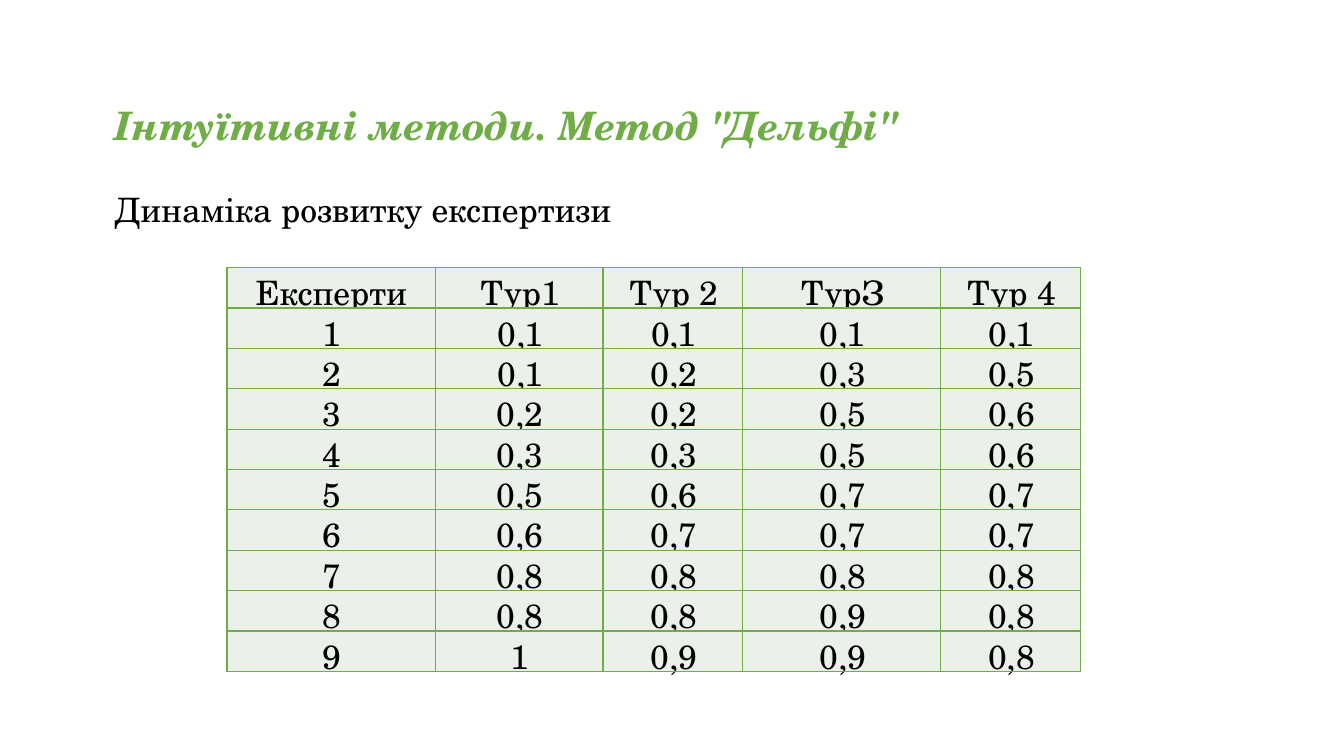
from lxml.etree import SubElement
from pptx import Presentation
from pptx.dml.color import RGBColor
from pptx.enum.text import MSO_ANCHOR, MSO_AUTO_SIZE, PP_ALIGN
from pptx.oxml.ns import qn
from pptx.util import Pt

TITLE = 'Інтуїтивні методи. Метод "Дельфі"'
SUBTITLE = "Динаміка розвитку експертизи"
HEADER = ["Експерти", "Тур1", "Тур 2", "ТурЗ", "Тур 4"]
ROUNDS = [
    ["0,1", "0,1", "0,1", "0,1"],
    ["0,1", "0,2", "0,3", "0,5"],
    ["0,2", "0,2", "0,5", "0,6"],
    ["0,3", "0,3", "0,5", "0,6"],
    ["0,5", "0,6", "0,7", "0,7"],
    ["0,6", "0,7", "0,7", "0,7"],
    ["0,8", "0,8", "0,8", "0,8"],
    ["0,8", "0,8", "0,9", "0,8"],
    ["1", "0,9", "0,9", "0,8"],
]
COLORS = {"green": "70AD47", "text": "000000", "cell": "EBF1E9"}
FONT = "TeX Gyre Schola"
COLUMN_WIDTHS = [149, 119.5, 100, 141.25, 100]
ROW_HEIGHT = 19.44


def add_text(paragraph, text, size, color, emphasis=False):
    run = paragraph.add_run()
    run.text = text
    run.font.name = FONT
    run.font.size = Pt(size)
    run.font.bold = run.font.italic = emphasis
    run.font.color.rgb = RGBColor.from_string(COLORS[color])


def add_borders(cell):
    properties = cell._tc.get_or_add_tcPr()
    for index, side in enumerate(("a:lnL", "a:lnR", "a:lnT", "a:lnB")):
        line = properties.makeelement(qn(side), {"w": str(Pt(1))})
        fill = SubElement(line, qn("a:solidFill"))
        SubElement(fill, qn("a:srgbClr"), val=COLORS["green"])
        properties.insert(index, line)


def add_heading(slide):
    shape = slide.shapes.add_textbox(Pt(75), Pt(69.1), Pt(809.3), Pt(99.4))
    frame = shape.text_frame
    frame.word_wrap = True
    frame.auto_size = MSO_AUTO_SIZE.SHAPE_TO_FIT_TEXT
    add_text(frame.paragraphs[0], TITLE, 28, "green", True)
    paragraph = frame.add_paragraph()
    paragraph.alignment = PP_ALIGN.JUSTIFY
    paragraph.space_before = Pt(29)
    add_text(paragraph, SUBTITLE, 24, "text")


def add_ratings(slide):
    rows = [HEADER] + [[str(number), *values] for number, values in enumerate(ROUNDS, 1)]
    table = slide.shapes.add_table(
        len(rows), len(HEADER), Pt(162.2), Pt(191.2),
        Pt(sum(COLUMN_WIDTHS)), Pt(ROW_HEIGHT * len(rows)),
    ).table
    for column, width in zip(table.columns, COLUMN_WIDTHS):
        column.width = Pt(width)
    for row_index, values in enumerate(rows):
        table.rows[row_index].height = Pt(ROW_HEIGHT)
        for column_index, value in enumerate(values):
            cell = table.cell(row_index, column_index)
            cell.margin_left = cell.margin_right = Pt(5)
            cell.margin_top = cell.margin_bottom = Pt(0)
            cell.vertical_anchor = MSO_ANCHOR.MIDDLE
            cell.fill.solid()
            cell.fill.fore_color.rgb = RGBColor.from_string(COLORS["cell"])
            add_borders(cell)
            paragraph = cell.text_frame.paragraphs[0]
            paragraph.alignment = PP_ALIGN.CENTER
            if column_index:
                paragraph._p.get_or_add_pPr().set("indent", str(Pt(1.4)))
            add_text(paragraph, value, 24, "text")


def main():
    presentation = Presentation()
    presentation.slide_width = Pt(960)
    presentation.slide_height = Pt(540)
    slide = presentation.slides.add_slide(presentation.slide_layouts[6])
    add_heading(slide)
    add_ratings(slide)
    presentation.save("out.pptx")


if __name__ == "__main__":
    main()
